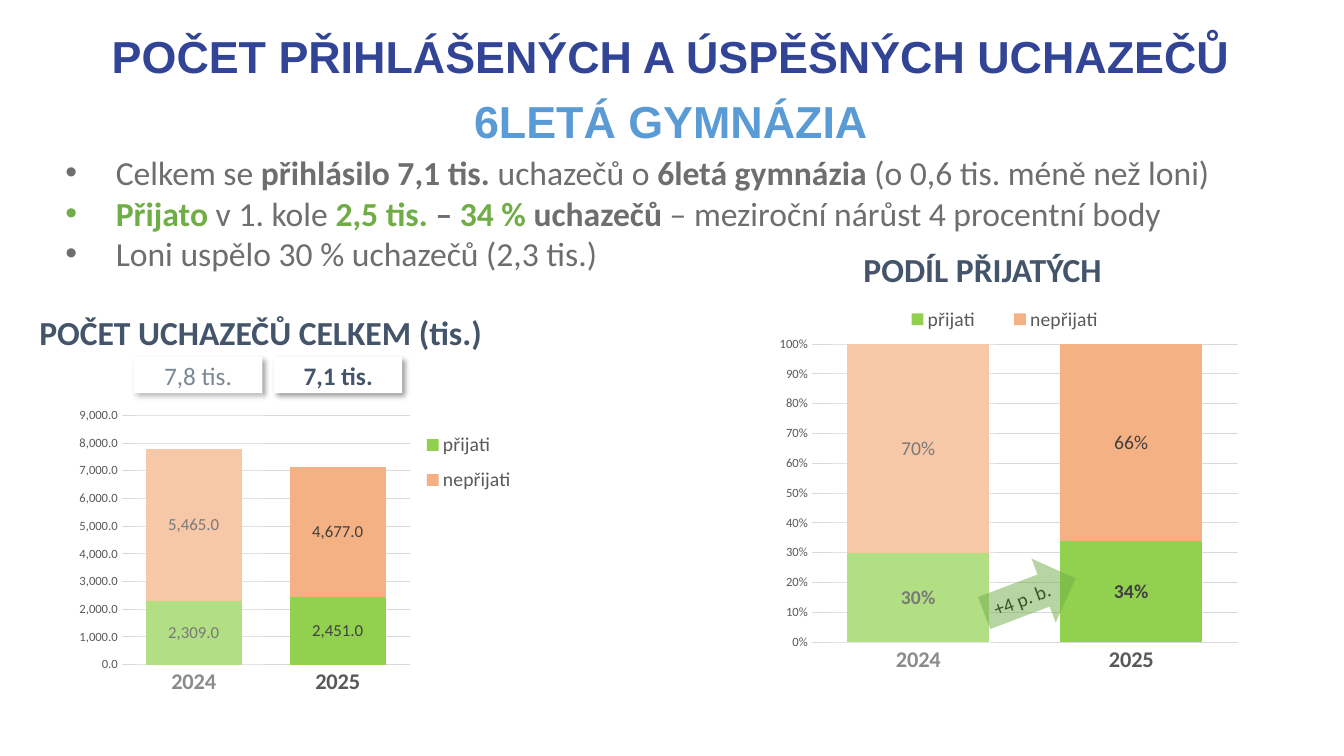
from dataclasses import dataclass

from lxml.etree import SubElement
from pptx import Presentation
from pptx.chart.data import CategoryChartData
from pptx.dml.color import RGBColor
from pptx.enum.chart import XL_CHART_TYPE, XL_LEGEND_POSITION, XL_TICK_MARK
from pptx.enum.shapes import MSO_SHAPE
from pptx.enum.text import MSO_ANCHOR, MSO_AUTO_SIZE, PP_ALIGN
from pptx.oxml import parse_xml
from pptx.oxml.ns import nsdecls, qn
from pptx.util import Inches, Pt

COLORS = {
    "white": "FFFFFF", "navy": "324496", "blue": "5B9BD5", "gray": "6D6E70",
    "green": "70AD47", "slate": "44546A", "axis": "595959", "grid": "D9D9D9",
    "label": "404040", "admitted": "92D050", "rejected": "F4B183", "arrow": "385723",
}
Box = tuple[float, float, float, float]


@dataclass
class ChartSpec:
    kind: XL_CHART_TYPE
    box: Box
    plot: Box
    legend: Box
    admitted: tuple[float, float]
    rejected: tuple[float, float]
    axis_format: str
    maximum: float
    step: float
    label_size: int
    admitted_bold: bool


@dataclass
class Label:
    text: str
    box: Box
    size: int = 24
    bold: bool = True
    color: str = "slate"


@dataclass
class Run:
    text: str
    bold: bool = False
    color: str = "gray"


CHARTS = [
    ChartSpec(XL_CHART_TYPE.COLUMN_STACKED, (0.55, 3.02, 4.66, 4.02),
              (0.141, 0.274, 0.613, 0.615), (0.76, 0.29, 0.24, 0.2),
              (2309, 2451), (5465, 4677), "#,##0.0", 9000, 1000, 12, False),
    ChartSpec(XL_CHART_TYPE.COLUMN_STACKED_100, (7.32, 2.89, 5.19, 3.97),
              (0.141, 0.132, 0.814, 0.745), (0.27, 0.03, 0.48, 0.08),
              (0.30, 0.34), (0.70, 0.66), "0%", 1, 0.1, 14, True),
]
TITLE = [("POČET PŘIHLÁŠENÝCH A ÚSPĚŠNÝCH UCHAZEČŮ", "navy"), ("6LETÁ GYMNÁZIA", "blue")]
BULLETS = [
    [Run("Celkem se "), Run("přihlásilo 7,1 tis. ", True), Run("uchazečů o "),
     Run("6letá gymnázia ", True), Run("(o 0,6 tis. méně než loni)")],
    [Run("Přijato ", True, "green"), Run("v 1. kole "), Run("2,5 tis. ", True, "green"),
     Run("– ", True), Run("34 %", True, "green"), Run(" uchazečů ", True),
     Run("– meziroční nárůst 4 procentní body")],
    [Run("Loni uspělo 30 % uchazečů (2,3 tis.)")],
]
HEADINGS = [
    Label("POČET UCHAZEČŮ CELKEM (tis.)", (0.18, 3.02, 4.81, 0.55)),
    Label("PODÍL PŘIJATÝCH", (7.32, 2.39, 4.85, 0.55)),
]
TOTALS = [
    Label("7,8 tis.", (1.33, 3.54, 1.27, 0.36), 18, False),
    Label("7,1 tis.", (2.72, 3.54, 1.27, 0.36), 18),
]
VEILS = [(8.24, 3.26, 1.63, 3.6), (1.34, 3.47, 1.27, 3.57)]
ARROW = Label("+4 p. b.", (9.73, 5.57, 0.97, 0.68), 14, False, "arrow")


def rgb(name: str) -> RGBColor:
    """Look up a colour."""
    return RGBColor.from_string(COLORS[name])


def inches(box: Box) -> list:
    """Turn a box into lengths."""
    return [Inches(v) for v in box]


def style(font, size: float, color: str, bold: bool = False, name: str = "Calibri") -> None:
    """Set the looks of a font."""
    font.size, font.bold, font.name = Pt(size), bold, name
    font.color.rgb = rgb(color)


def layout_xml(box: Box, inner: bool = False):
    """Make a manual layout for a part of a chart."""
    target = '<c:layoutTarget val="inner"/>' if inner else ""
    modes = '<c:xMode val="edge"/><c:yMode val="edge"/>'
    sizes = "".join(f'<c:{k} val="{v}"/>' for k, v in zip("xywh", box))
    return parse_xml(f'<c:layout {nsdecls("c")}><c:manualLayout>{target}{modes}{sizes}'
                     '</c:manualLayout></c:layout>')


def add_stacked_chart(s, spec: ChartSpec) -> None:
    """Draw a stacked column chart of admitted and rejected applicants."""
    data = CategoryChartData()
    data.categories = ["2024", "2025"]
    data.add_series("přijati", spec.admitted)
    data.add_series("nepřijati", spec.rejected)
    chart = s.shapes.add_chart(spec.kind, *inches(spec.box), data).chart
    chart.has_title = False
    chart.font.size, chart.font.name = Pt(10), "Calibri"

    cat, val = chart.category_axis, chart.value_axis
    for axis, size, bold in ((cat, 16, True), (val, 9, False)):
        axis.major_tick_mark = axis.minor_tick_mark = XL_TICK_MARK.NONE
        style(axis.tick_labels.font, size, "axis", bold)
    val.minimum_scale, val.maximum_scale, val.major_unit = 0, spec.maximum, spec.step
    val.tick_labels.number_format = spec.axis_format
    val.tick_labels.number_format_is_linked = False
    val.format.line.fill.background()
    for line in (cat.format.line, val.major_gridlines.format.line):
        line.color.rgb, line.width = rgb("grid"), Pt(0.75)

    plot = chart.plots[0]
    plot.gap_width, plot.overlap, plot.vary_by_categories = 50, 100, False
    for series, color, bold in zip(plot.series, ("admitted", "rejected"),
                                   (spec.admitted_bold, False)):
        series.format.fill.solid()
        series.format.fill.fore_color.rgb = rgb(color)
        labels = series.data_labels
        labels.show_value = True
        labels.number_format, labels.number_format_is_linked = spec.axis_format, False
        style(labels.font, spec.label_size, "label", bold)

    chart.has_legend = True
    legend = chart.legend
    legend.position, legend.include_in_layout = XL_LEGEND_POSITION.BOTTOM, False
    style(legend.font, 14, "axis")
    area = chart.element.find(".//" + qn("c:plotArea"))
    legend_el = chart.element.find(".//" + qn("c:legend"))
    for parent in (area, legend_el):
        for old in parent.findall(qn("c:layout")):
            parent.remove(old)
    area.insert(0, layout_xml(spec.plot, True))
    legend_el.find(qn("c:legendPos")).addnext(layout_xml(spec.legend))


def write_label(sp, label: Label) -> None:
    """Put one centred line of text into a shape."""
    tf = sp.text_frame
    tf.text, tf.vertical_anchor = label.text, MSO_ANCHOR.MIDDLE
    p = tf.paragraphs[0]
    p.alignment = PP_ALIGN.CENTER
    style(p.runs[0].font, label.size, label.color, label.bold)


def add_filled(s, preset: MSO_SHAPE, box: Box, color: str, opacity: int = 100):
    """Add a borderless shape with a fill of the given opacity in percent."""
    sp = s.shapes.add_shape(preset, *inches(box))
    sp.shadow.inherit = False
    sp.fill.solid()
    sp.fill.fore_color.rgb = rgb(color)
    sp.line.fill.background()
    if opacity < 100:
        SubElement(sp.element.spPr.find(".//" + qn("a:srgbClr")), qn("a:alpha"),
                   val=str(opacity * 1000))
    return sp


def add_total(s, label: Label) -> None:
    """Add a white card with a drop shadow."""
    sp = add_filled(s, MSO_SHAPE.RECTANGLE, label.box, "white")
    effects = sp.element.spPr.find(qn("a:effectLst"))
    effects.append(parse_xml(
        f'<a:outerShdw {nsdecls("a")} blurRad="{Pt(4)}" dist="{Pt(3)}" dir="2700000" '
        'algn="tl" rotWithShape="0"><a:srgbClr val="000000"><a:alpha val="40000"/>'
        '</a:srgbClr></a:outerShdw>'))
    write_label(sp, label)


def add_title(s) -> None:
    """Fill the title placeholder with its two lines."""
    sp = s.shapes.title
    sp.left, sp.top, sp.width, sp.height = inches((0.55, 0.21, 12.21, 1.27))
    tf = sp.text_frame
    tf.text = "\n".join(text for text, _ in TITLE)
    tf.auto_size, tf.vertical_anchor = MSO_AUTO_SIZE.NONE, MSO_ANCHOR.TOP
    for p, (_, color) in zip(tf.paragraphs, TITLE):
        p.alignment, p.line_spacing = PP_ALIGN.CENTER, 1.05
        p.space_before, p.space_after = Pt(0), Pt(6)
        style(p.runs[0].font, 32, color, True, "Arial")


def add_bullets(s) -> None:
    """Add the bulleted summary."""
    tf = s.shapes.add_textbox(*inches((0.55, 1.46, 12.45, 1.31))).text_frame
    tf.word_wrap = True
    for i, runs in enumerate(BULLETS):
        p = tf.add_paragraph() if i else tf.paragraphs[0]
        pPr = p._p.get_or_add_pPr()
        pPr.set("marL", str(Inches(0.5)))
        pPr.set("indent", str(-Inches(0.5)))
        SubElement(pPr, qn("a:buFont"), typeface="Arial")
        SubElement(pPr, qn("a:buChar"), char="•")
        for run in runs:
            r = p.add_run()
            r.text = run.text
            style(r.font, 24, run.color, run.bold)


def main() -> None:
    """Build the slide and save it."""
    prs = Presentation()
    prs.slide_width, prs.slide_height = Inches(13.33), Inches(7.5)
    s = prs.slides.add_slide(prs.slide_layouts[5])
    for spec in CHARTS:
        add_stacked_chart(s, spec)
    add_title(s)
    add_bullets(s)
    for heading in HEADINGS:
        sp = s.shapes.add_textbox(*inches(heading.box))
        sp.text_frame.word_wrap = True
        write_label(sp, heading)
    for total in TOTALS:
        add_total(s, total)
    for box in VEILS:
        add_filled(s, MSO_SHAPE.RECTANGLE, box, "white", 30)
    arrow = add_filled(s, MSO_SHAPE.RIGHT_ARROW, ARROW.box, "green", 50)
    arrow.rotation = 339.3
    write_label(arrow, ARROW)
    arrow.text_frame.word_wrap = False
    prs.save("out.pptx")


if __name__ == "__main__":
    main()
